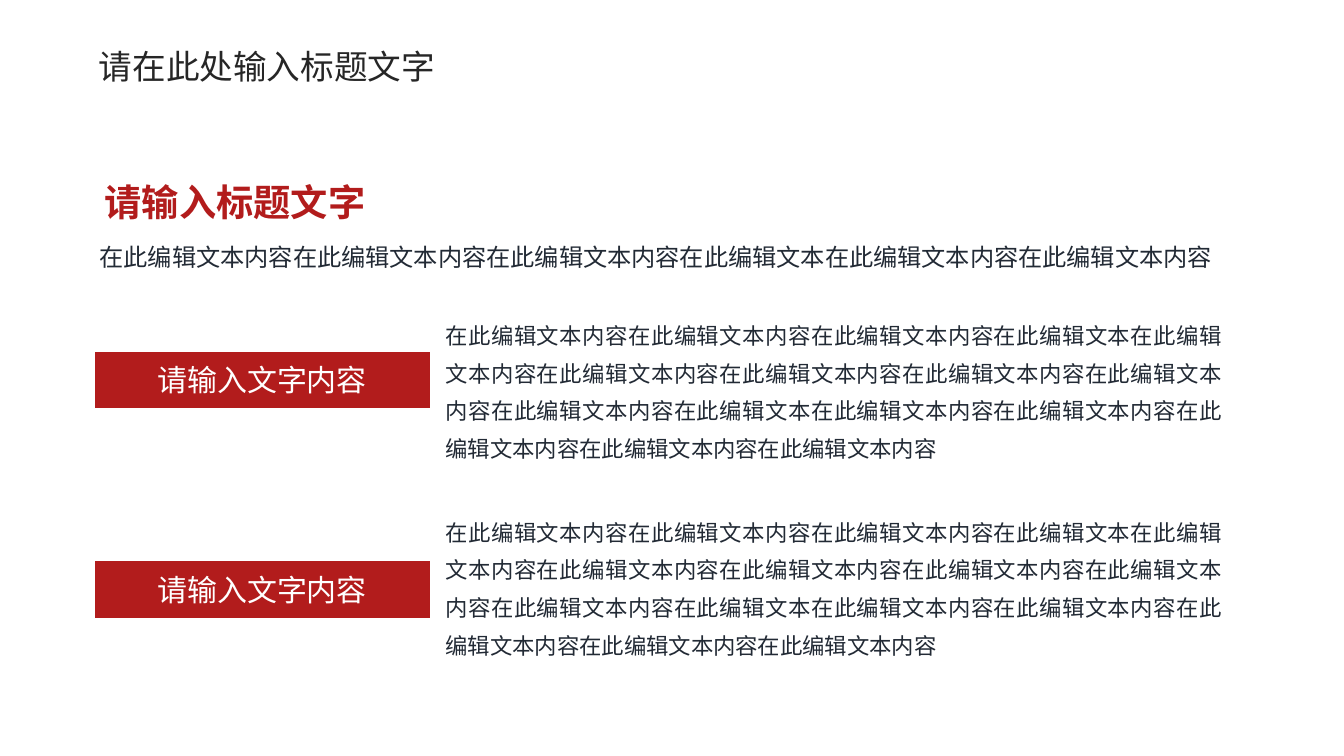
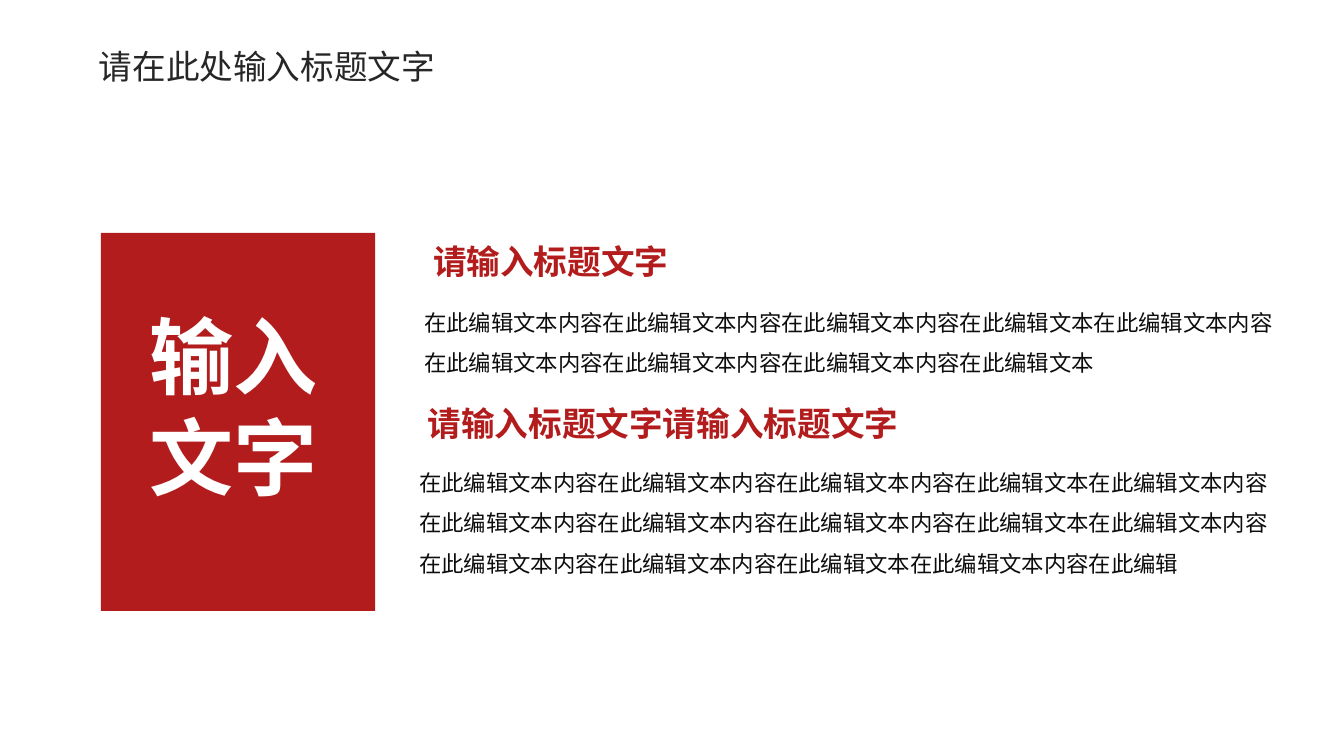
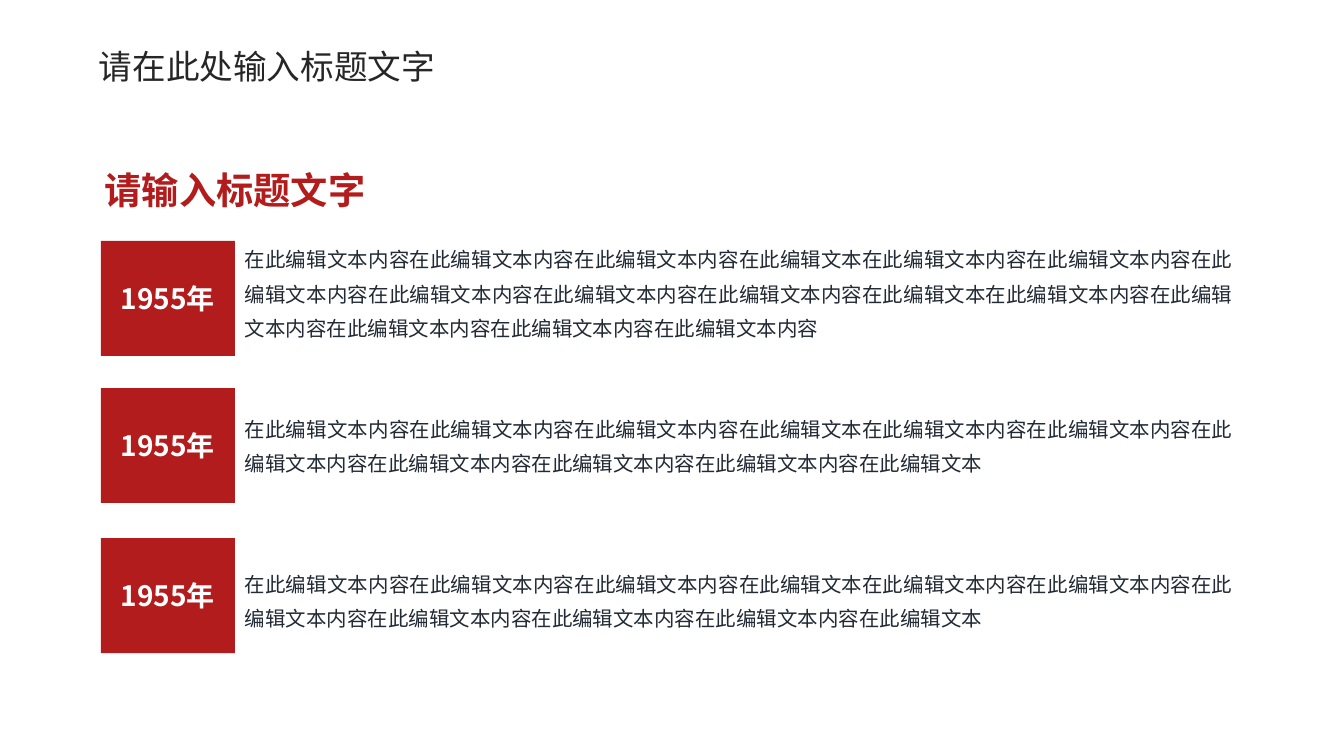
from lxml import etree
from pptx import Presentation
from pptx.dml.color import RGBColor
from pptx.enum.shapes import MSO_SHAPE
from pptx.enum.text import MSO_ANCHOR, MSO_AUTO_SIZE, PP_ALIGN
from pptx.oxml.ns import qn
from pptx.util import Inches, Pt

# Shared style
RED = RGBColor(0xB2, 0x1C, 0x1C)
WHITE = RGBColor(0xFF, 0xFF, 0xFF)
TITLE_GREY = RGBColor(0x26, 0x26, 0x26)
SLATE = RGBColor(0x22, 0x2A, 0x35)
NEAR_BLACK = RGBColor(0x0D, 0x0D, 0x0D)
FONT = "Noto Sans CJK SC"
LINE_HEIGHT = 1.2  # single line spacing, in ems

RECTANGLE, PARALLELOGRAM = MSO_SHAPE.RECTANGLE, MSO_SHAPE.PARALLELOGRAM
LEFT, CENTER, JUSTIFY = PP_ALIGN.LEFT, PP_ALIGN.CENTER, PP_ALIGN.JUSTIFY
TOP, MIDDLE = MSO_ANCHOR.TOP, MSO_ANCHOR.MIDDLE
NO_AUTOFIT = MSO_AUTO_SIZE.NONE

# Wording
TITLE = "请在此处输入标题文字"
HEADING = "请输入标题文字"
PHRASE = "在此编辑文本内容"
SHORT_PHRASE = "在此编辑文本"
OPENING = PHRASE * 3 + SHORT_PHRASE
INTRO = OPENING + PHRASE * 2
SHORT_BODY = OPENING + PHRASE * 6 + SHORT_PHRASE
LONG_BODY = SHORT_BODY + PHRASE * 5
FIRST_POINT = OPENING + PHRASE * 4 + SHORT_PHRASE
SECOND_POINT = FIRST_POINT + OPENING + PHRASE + "在此编辑"


def write(frame, text, size, color, bold=False, align=LEFT, spacing=1.0,
          anchor=TOP, wrap=True):
    """Fill a text frame and format all of its runs alike."""
    frame.text = text
    frame.word_wrap = wrap
    frame.auto_size = NO_AUTOFIT
    frame.vertical_anchor = anchor
    for paragraph in frame.paragraphs:
        paragraph.alignment = align
        paragraph.line_spacing = Pt(round(size * LINE_HEIGHT * spacing, 1))
        for run in paragraph.runs:
            run.font.size = Pt(size)
            run.font.bold = bold
            run.font.color.rgb = color
            run.font.name = FONT
            east_asian = etree.SubElement(run._r.get_or_add_rPr(), qn("a:ea"))
            east_asian.set("typeface", FONT)


def add_text(slide, box, text, size, color, **style):
    frame = slide.shapes.add_textbox(*map(Inches, box)).text_frame
    write(frame, text, size, color, **style)


def add_heading(slide, top):
    add_text(slide, (0.94, top, 2.8, 0.5), HEADING, 26.6, RED,
             bold=True, spacing=0.9, wrap=False)


def add_block(slide, kind, box, fill=RED):
    """Borderless shape, red unless fill is None; returns its text frame."""
    block = slide.shapes.add_shape(kind, *map(Inches, box))
    block.shadow.inherit = False
    block.line.fill.background()
    if fill is None:
        block.fill.background()
    else:
        block.fill.solid()
        block.fill.fore_color.rgb = fill
    if kind == PARALLELOGRAM:
        block.adjustments[0] = 0  # upright sides
    return block.text_frame


def place_title(layout):
    title = next(p for p in layout.placeholders
                 if p.placeholder_format.idx == 0)
    title.left, title.top = Inches(0.88), Inches(0.41)
    title.width, title.height = Inches(5.04), Inches(0.5)


def add_slide(prs, layout):
    slide = prs.slides.add_slide(layout)
    write(slide.shapes.title.text_frame, TITLE, 24, TITLE_GREY)
    return slide


def build_labelled_texts(slide):
    add_heading(slide, 1.77)
    add_text(slide, (0.89, 2.21, 11.67, 0.54), INTRO, 17.3, SLATE, spacing=1.5)
    for text_top, label_top in ((3.04, 3.49), (4.99, 5.57)):
        add_text(slide, (4.32, text_top, 7.91, 1.61), LONG_BODY, 16, SLATE,
                 align=JUSTIFY, spacing=1.4)
        label = add_block(slide, PARALLELOGRAM, (0.94, label_top, 3.32, 0.56))
        write(label, "请输入文字内容", 21.4, WHITE, align=CENTER, anchor=MIDDLE)


def build_panel(slide):
    add_block(slide, RECTANGLE, (1, 2.31, 2.72, 3.75))
    add_text(slide, (1.38, 2.97, 1.87, 2.12), "输入\n文字", 60, WHITE,
             bold=True, wrap=False)
    points = (
        ((3.67, 2.31, 6.33, 0.56), HEADING,
         (4.11, 2.88, 8.67, 0.91), FIRST_POINT),
        ((3.51, 3.92, 7.61, 0.56), HEADING * 2,
         (4.06, 4.47, 8.67, 1.31), SECOND_POINT),
    )
    for heading_box, heading, text_box, text in points:
        add_text(slide, text_box, text, 16, NEAR_BLACK, spacing=1.5)
        frame = add_block(slide, PARALLELOGRAM, heading_box, fill=None)
        write(frame, heading, 24, RED, bold=True, anchor=MIDDLE)


def build_timeline(slide):
    add_heading(slide, 1.66)
    events = (
        (2.39, 2.31, 1.13, LONG_BODY),
        (3.85, 3.99, 0.79, SHORT_BODY),
        (5.34, 5.53, 0.79, SHORT_BODY),
    )
    for year_top, text_top, height, text in events:
        year = add_block(slide, RECTANGLE, (1, year_top, 1.33, 1.14))
        write(year, "1955年", 20, WHITE, bold=True, align=CENTER,
              anchor=MIDDLE)
        add_text(slide, (2.33, text_top, 10, height), text, 14.6, SLATE,
                 align=JUSTIFY, spacing=1.4)


def main():
    prs = Presentation()
    prs.slide_width, prs.slide_height = Inches(13.33), Inches(7.5)
    layout = prs.slide_layouts.get_by_name("Title Only")
    place_title(layout)
    for build in (build_labelled_texts, build_panel, build_timeline):
        build(add_slide(prs, layout))
    prs.save("out.pptx")


if __name__ == "__main__":
    main()
